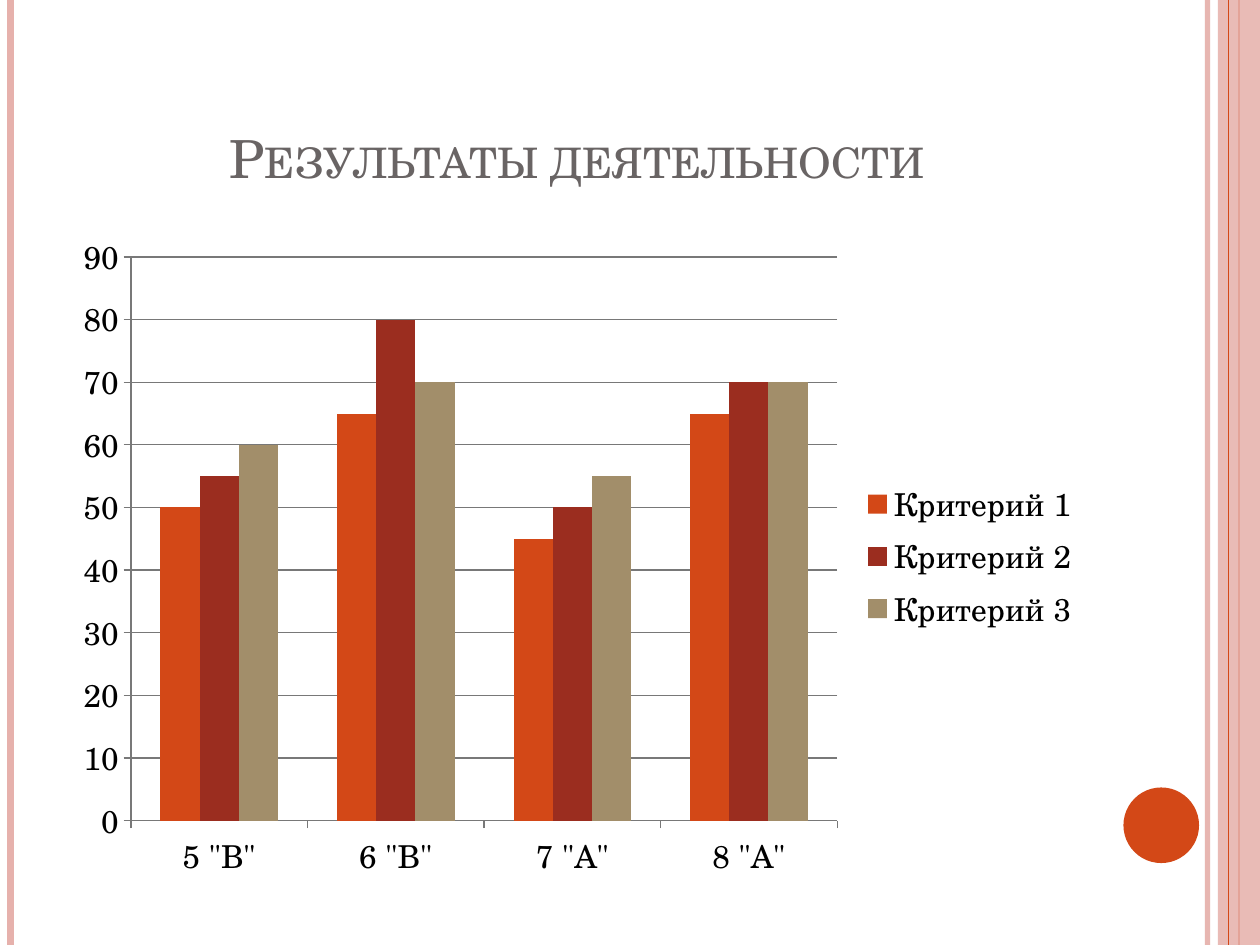
import pptx
import pptx.chart.data
import pptx.dml.color
import pptx.enum.chart
import pptx.enum.shapes
import pptx.enum.text
import pptx.oxml.ns
import pptx.util
from lxml import etree

Pt = pptx.util.Pt
qn = pptx.oxml.ns.qn
WIDTH, HEIGHT = 720, 540
FONT = "TeX Gyre Schola"
COLORS = {
    "pink": "E6B1AC",
    "orange": "D34817",
    "red": "9B2D1F",
    "sand": "A28E6A",
    "title": "696464",
    "text": "000000",
    "axis": "787878",
}


class SlideBuilder:
    """Holds the style and the current slide and adds elements to it."""

    def __init__(self, slide, font, colors):
        self.slide = slide
        self.font = font
        self.colors = colors

    def rgb(self, name):
        return pptx.dml.color.RGBColor.from_string(self.colors[name])

    def paint(self, fill, color, opacity=100):
        fill.solid()
        fill.fore_color.rgb = self.rgb(color)
        if opacity < 100:
            for node in fill._xPr.iter(qn("a:srgbClr")):
                etree.SubElement(node, qn("a:alpha"), val=str(opacity * 1000))

    def style_font(self, font, size, color):
        font.name = self.font
        font.size = Pt(size)
        font.color.rgb = self.rgb(color)

    def stripe(self, x, width, color, opacity=100):
        line = self.slide.shapes.add_connector(
            pptx.enum.shapes.MSO_CONNECTOR.STRAIGHT, Pt(x), Pt(0), Pt(x), Pt(HEIGHT)
        )
        line.line.width = Pt(width)
        self.paint(line.line.fill, color, opacity)
        etree.SubElement(line._element.spPr, qn("a:effectLst"))

    def shape(self, kind, left, top, width, height, color, opacity=100):
        shape = self.slide.shapes.add_shape(kind, Pt(left), Pt(top), Pt(width), Pt(height))
        shape.shadow.inherit = False
        shape.line.fill.background()
        self.paint(shape.fill, color, opacity)

    def title(self, text, left, top, width, height, size):
        frame = self.slide.shapes.add_textbox(Pt(left), Pt(top), Pt(width), Pt(height)).text_frame
        frame.word_wrap = True
        frame.vertical_anchor = pptx.enum.text.MSO_ANCHOR.BOTTOM
        frame.text = text
        heading = frame.paragraphs[0]
        heading.alignment = pptx.enum.text.PP_ALIGN.CENTER
        run = heading.runs[0]
        self.style_font(run.font, size, "title")
        run._r.get_or_add_rPr().set("cap", "small")

    def column_chart(self, categories, series, left, top, width, height, size):
        data = pptx.chart.data.CategoryChartData()
        data.categories = categories
        for name, values, _ in series:
            data.add_series(name, values)
        chart = self.slide.shapes.add_chart(
            pptx.enum.chart.XL_CHART_TYPE.COLUMN_CLUSTERED,
            Pt(left), Pt(top), Pt(width), Pt(height), data,
        ).chart
        self.style_font(chart.font, size, "text")
        chart.has_title = False
        chart.has_legend = True
        chart.legend.position = pptx.enum.chart.XL_LEGEND_POSITION.RIGHT
        chart.legend.include_in_layout = False

        plot = chart.plots[0]
        plot.vary_by_categories = False
        plot.gap_width = 150
        plot.overlap = 0
        for columns, (_, _, color) in zip(plot.series, series):
            self.paint(columns.format.fill, color)

        chart.value_axis.has_major_gridlines = True
        chart.value_axis.minimum_scale = 0
        chart.value_axis.maximum_scale = 90
        chart.value_axis.major_unit = 10
        for axis in (chart.category_axis, chart.value_axis):
            axis.major_tick_mark = pptx.enum.chart.XL_TICK_MARK.OUTSIDE
            axis.minor_tick_mark = pptx.enum.chart.XL_TICK_MARK.NONE
        for part in (chart.category_axis, chart.value_axis, chart.value_axis.major_gridlines):
            part.format.line.width = Pt(0.75)
            part.format.line.color.rgb = self.rgb("axis")


def main():
    presentation = pptx.Presentation()
    presentation.slide_width = Pt(WIDTH)
    presentation.slide_height = Pt(HEIGHT)
    slide = presentation.slides.add_slide(presentation.slide_layouts[6])
    builder = SlideBuilder(slide, FONT, COLORS)
    shapes = pptx.enum.shapes.MSO_SHAPE

    builder.stripe(690, 3, "pink", 93)
    builder.stripe(6, 4.5, "pink")
    builder.stripe(708, 1.5, "orange")
    builder.shape(shapes.RECTANGLE, 696, 0, 24, HEIGHT, "pink", 87)
    builder.stripe(702, 0.75, "orange")
    builder.shape(shapes.OVAL, 642, 450, 43.2, 43.2, "orange")

    builder.title("Результаты деятельности", 36, 21.6, 588, 90, 30)

    classes = ['5 "В"', '6 "В"', '7 "А"', '8 "А"']
    criteria = [
        ("Критерий 1", (50, 65, 45, 65), "orange"),
        ("Критерий 2", (55, 80, 50, 70), "red"),
        ("Критерий 3", (60, 70, 55, 70), "sand"),
    ]
    builder.column_chart(classes, criteria, 36, 126, 588, 384, 18)

    presentation.save("out.pptx")


if __name__ == "__main__":
    main()
